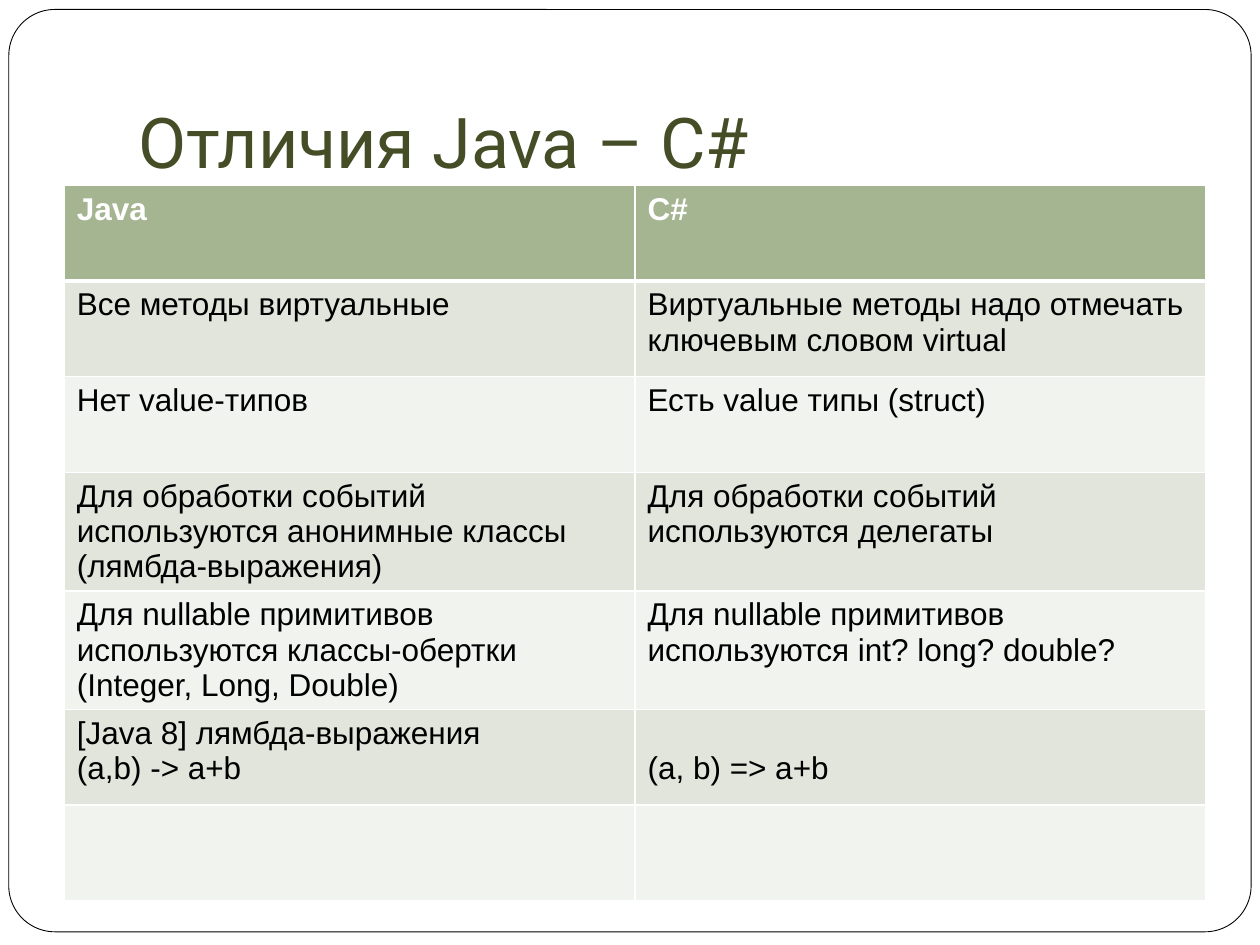
from lxml.etree import SubElement
from pptx import Presentation
from pptx.dml.color import RGBColor
from pptx.enum.shapes import MSO_SHAPE
from pptx.enum.text import MSO_ANCHOR, PP_ALIGN
from pptx.oxml.ns import qn
from pptx.util import Inches, Pt

WHITE = RGBColor(0xFF, 0xFF, 0xFF)
BLACK = RGBColor(0x00, 0x00, 0x00)
OLIVE = RGBColor(0x44, 0x4D, 0x26)
HEADER_GREEN = RGBColor(0xA5, 0xB5, 0x92)
BANDS = (RGBColor(0xE1, 0xE5, 0xDC), RGBColor(0xF0, 0xF3, 0xEE))

WIDTH, HEIGHT = 10, 7.5
ROW_HEIGHT = 0.76
LINE_HEIGHT = 0.28

DIFFERENCES = [
    ("Java", "C#"),
    ("Все методы виртуальные",
     "Виртуальные методы надо отмечать ключевым словом virtual"),
    ("Нет value-типов", "Есть value типы (struct)"),
    ("Для обработки событий используются анонимные классы (лямбда-выражения)",
     "Для обработки событий используются делегаты"),
    ("Для nullable примитивов используются классы-обертки (Integer, Long, Double)",
     "Для nullable примитивов используются int? long? double?"),
    ("[Java 8] лямбда-выражения\n(a,b) -> a+b", "(a, b) => a+b"),
    ("", ""),
]
LAMBDA_CELL = (5, 1)


class SlideBuilder:
    title_font, body_font = "Roboto", "Arial"
    title_size, body_size = 40, 18

    def __init__(self, deck):
        self.page = deck.slides.add_slide(deck.slide_layouts[5])

    def area(self, left, top, width, height):
        """Turn shares of the slide's size into lengths."""
        return (Inches(WIDTH * left), Inches(HEIGHT * top),
                Inches(WIDTH * width), Inches(HEIGHT * height))

    def add_span(self, para, text, font, size, color, bold=False):
        span = para.add_run()
        span.text = text
        span.font.name = font
        span.font.size = Pt(size)
        span.font.bold = bold
        span.font.color.rgb = color

    def frame(self, left, top, width, height):
        """Put a rounded outline behind everything else."""
        shapes = self.page.shapes
        box = shapes.add_shape(MSO_SHAPE.ROUNDED_RECTANGLE,
                               *self.area(left, top, width, height))
        box.adjustments[0] = 0.05
        box.shadow.inherit = False
        box.fill.solid()
        box.fill.fore_color.rgb = WHITE
        box.line.color.rgb = BLACK
        box.line.width = Pt(0.5)
        shapes.element.insert(2, box.element)

    def title(self, text, left, top, width, height):
        box = self.page.shapes.title
        box.left, box.top, box.width, box.height = self.area(left, top, width, height)
        content = box.text_frame
        content.word_wrap = True
        content.vertical_anchor = MSO_ANCHOR.BOTTOM
        content.margin_bottom = Inches(0.1)
        para = content.paragraphs[0]
        para.alignment = PP_ALIGN.LEFT
        self.add_span(para, text, self.title_font, self.title_size, OLIVE)

    def borders(self, cell, widths):
        properties = cell._tc.get_or_add_tcPr()
        for side, width in zip("LRTB", widths):
            line = SubElement(properties, qn(f"a:ln{side}"), w=str(Pt(width)))
            fill = SubElement(line, qn("a:solidFill"))
            SubElement(fill, qn("a:srgbClr"), val=str(WHITE))

    def cell(self, cell, text, row):
        header = row == 0
        self.borders(cell, (1, 1, 3 if row == 1 else 1, 3 if header else 1))
        cell.fill.solid()
        cell.fill.fore_color.rgb = HEADER_GREEN if header else BANDS[(row - 1) % 2]
        content = cell.text_frame
        for index, line in enumerate(text.splitlines()):
            para = content.add_paragraph() if index else content.paragraphs[0]
            self.add_span(para, line, self.body_font, self.body_size,
                          WHITE if header else BLACK, header)

    def table(self, rows, left, top, width):
        height = ROW_HEIGHT * len(rows) / HEIGHT
        table = self.page.shapes.add_table(
            len(rows), len(rows[0]), *self.area(left, top, width, height)).table
        table.horz_banding = False
        for row, texts in enumerate(rows):
            table.rows[row].height = Inches(ROW_HEIGHT)
            for column, text in enumerate(texts):
                self.cell(table.cell(row, column), text, row)
        return table


def main():
    deck = Presentation()
    deck.slide_width, deck.slide_height = Inches(WIDTH), Inches(HEIGHT)
    builder = SlideBuilder(deck)
    builder.frame(0.007, 0.01, 0.986, 0.976)
    builder.title("Отличия Java – C#", 0.1, 0.04, 0.85, 0.167)
    table = builder.table(DIFFERENCES, 0.051, 0.196, 0.906)
    # Align the C# lambda with the second line of its Java neighbour.
    table.cell(*LAMBDA_CELL).margin_top = Inches(0.05 + LINE_HEIGHT)
    deck.save("out.pptx")


if __name__ == "__main__":
    main()
